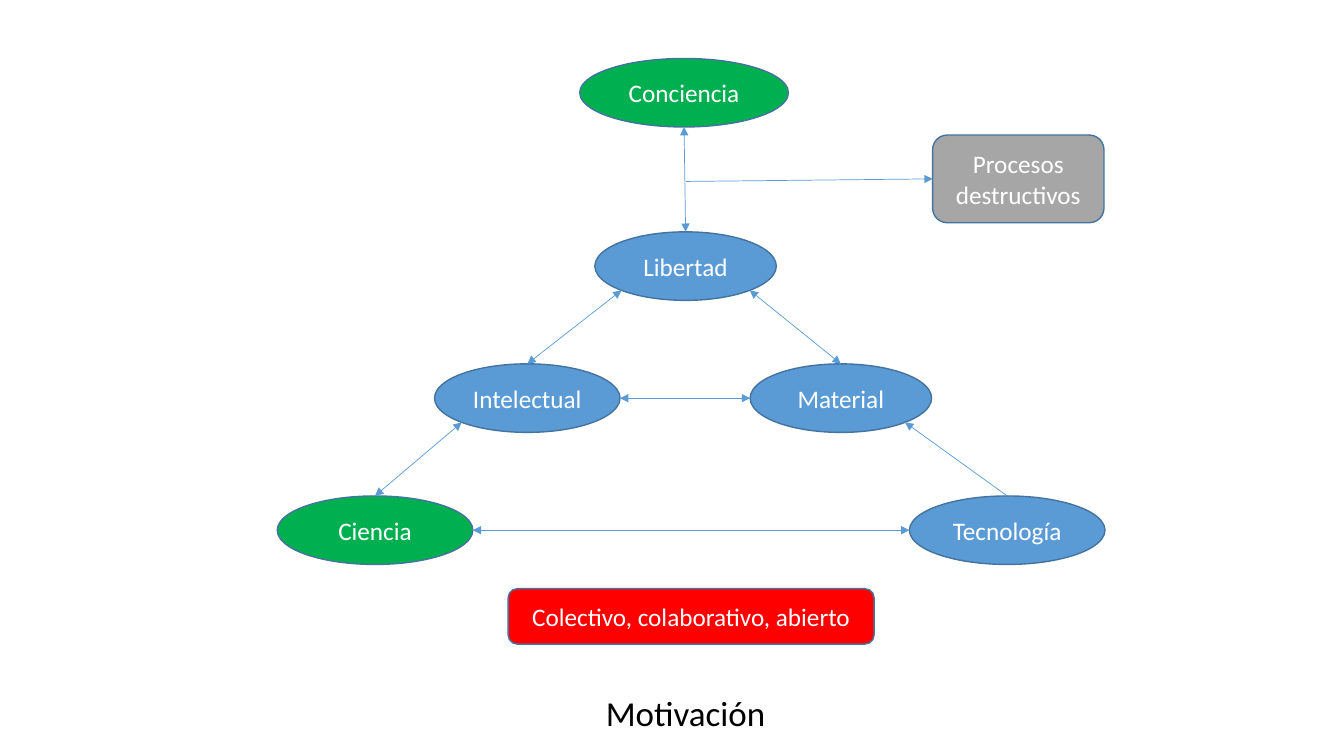
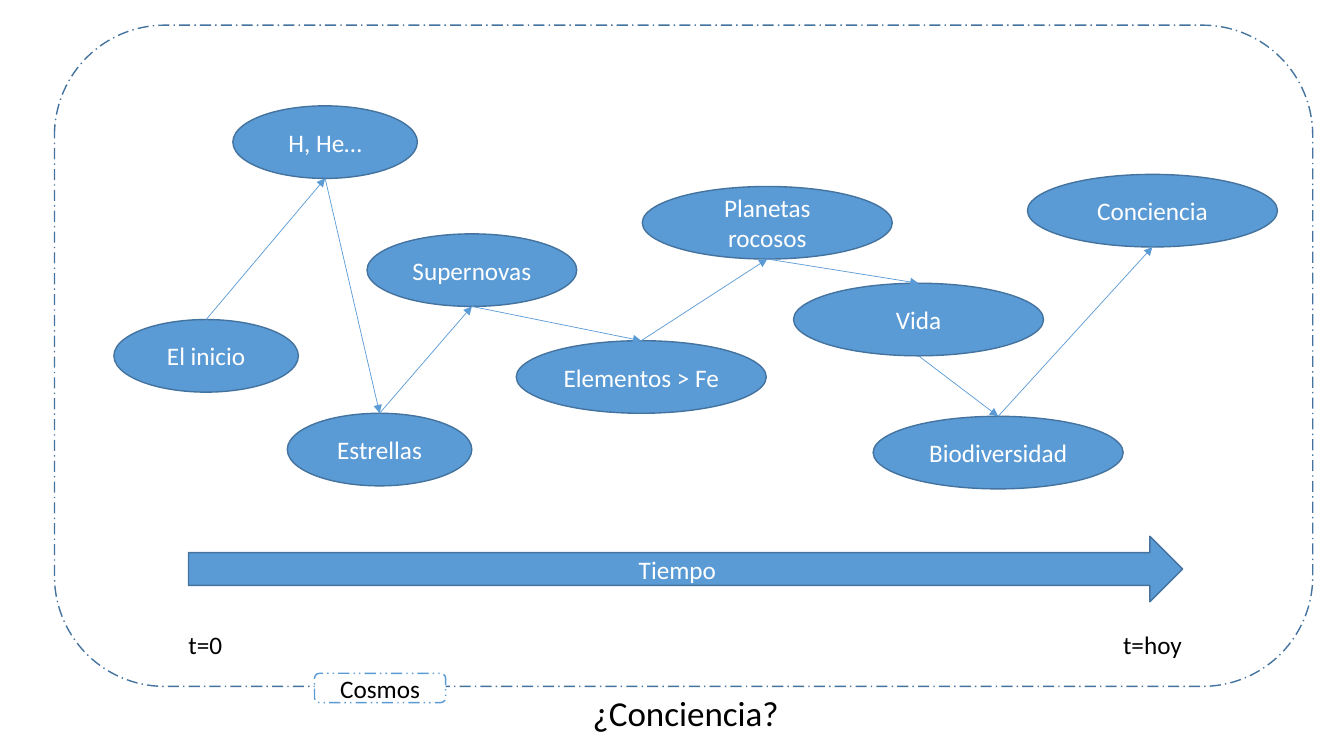
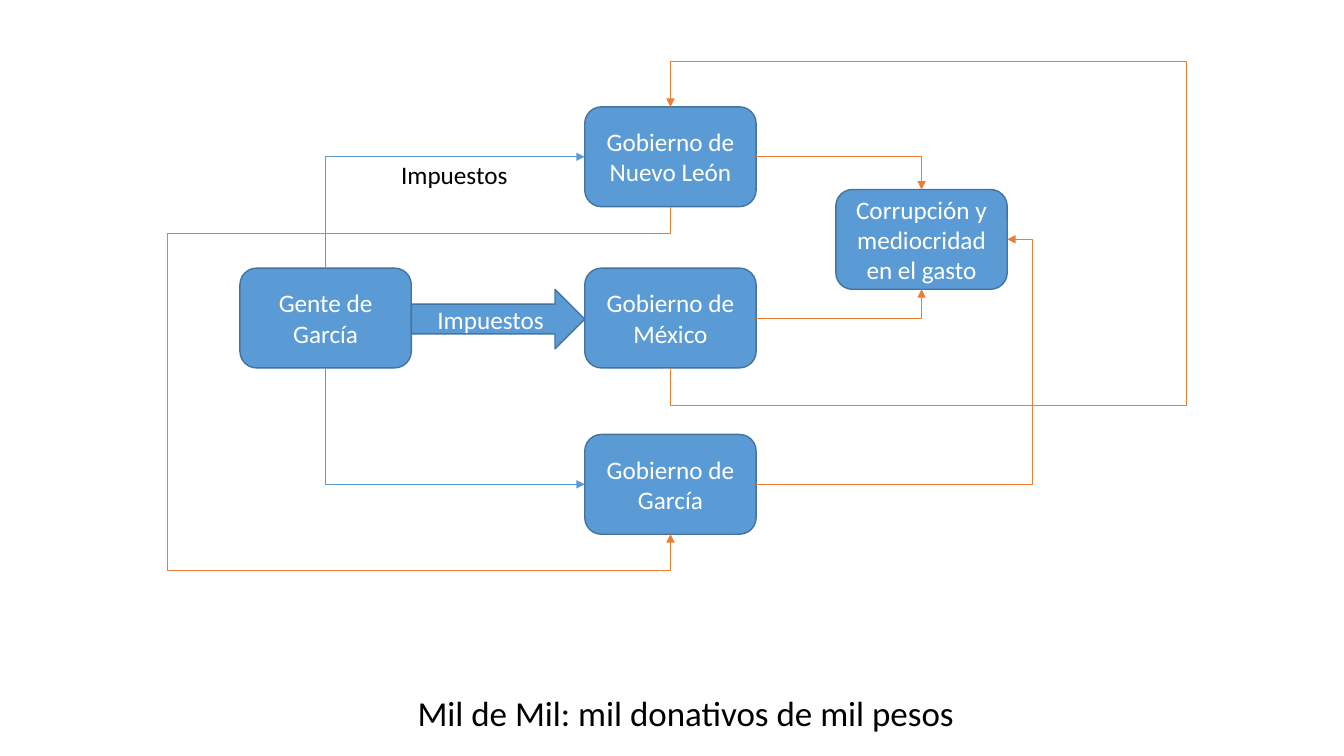
from dataclasses import dataclass
from itertools import pairwise
from math import sqrt

from lxml.etree import SubElement
from pptx import Presentation
from pptx.dml.color import RGBColor
from pptx.enum.dml import MSO_LINE
from pptx.enum.shapes import MSO_CONNECTOR, MSO_SHAPE
from pptx.enum.text import MSO_ANCHOR, MSO_AUTO_SIZE, PP_ALIGN
from pptx.oxml.ns import qn
from pptx.util import Inches, Pt


@dataclass(frozen=True)
class Theme:
    font: str = "Calibri"
    title_size: int = 25
    body_size: int = 18
    outline_width: float = 1
    arrow_width: float = 0.5
    blue: str = "5B9BD5"
    outline: str = "43739E"
    green: str = "00B050"
    gray: str = "A6A6A6"
    red: str = "FF0000"
    orange: str = "ED7D31"
    white: str = "FFFFFF"
    black: str = "000000"


THEME = Theme()
TOP, LEFT, BOTTOM, RIGHT = range(4)
DIAGONAL = 1 / sqrt(2)
TITLE_CENTER = 6.8
TITLE_TOP = 6.81


def rgb(color):
    return RGBColor.from_string(color)


def write(shape, text, color, size=THEME.body_size, align=PP_ALIGN.CENTER):
    shape.text_frame.text = text
    paragraph = shape.text_frame.paragraphs[0]
    paragraph.alignment = align
    font = paragraph.runs[0].font
    font.name = THEME.font
    font.size = Pt(size)
    font.color.rgb = rgb(color)


def add_label(slide, text, left, top, width, height=0.4,
              size=THEME.body_size, align=PP_ALIGN.LEFT):
    label = slide.shapes.add_textbox(
        Inches(left), Inches(top), Inches(width), Inches(height))
    write(label, text, THEME.black, size, align)
    label.text_frame.word_wrap = False
    label.text_frame.auto_size = MSO_AUTO_SIZE.SHAPE_TO_FIT_TEXT


def add_titled_slide(deck, title, width):
    slide = deck.slides.add_slide(deck.slide_layouts[6])
    add_label(slide, title, TITLE_CENTER - width / 2, TITLE_TOP, width, 0.52,
              THEME.title_size, PP_ALIGN.CENTER)
    return slide


def add_node(slide, kind, text, box, fill=THEME.blue, outline=THEME.outline,
             dash=None, color=THEME.white):
    node = slide.shapes.add_shape(kind, *map(Inches, box))
    node.shadow.inherit = False
    if fill:
        node.fill.solid()
        node.fill.fore_color.rgb = rgb(fill)
    else:
        node.fill.background()
    node.line.color.rgb = rgb(outline)
    node.line.width = Pt(THEME.outline_width)
    if dash:
        node.line.dash_style = dash
    if text:
        write(node, text, color)
        node.text_frame.vertical_anchor = MSO_ANCHOR.MIDDLE
    return node


def point_on(node, across, down):
    x = node.left + node.width * (1 + across) / 2
    y = node.top + node.height * (1 + down) / 2
    return round(x), round(y)


def style_arrow(arrow, color, ends):
    arrow.line.color.rgb = rgb(color)
    arrow.line.width = Pt(THEME.arrow_width)
    properties = arrow.element.spPr
    for end in ends:
        SubElement(properties.find(qn("a:ln")), qn(f"a:{end}End"), type="triangle")
    if properties.find(qn("a:effectLst")) is None:
        SubElement(properties, qn("a:effectLst"))


def add_arrow(slide, start, end, ends=("head", "tail")):
    arrow = slide.shapes.add_connector(MSO_CONNECTOR.STRAIGHT, *start, *end)
    style_arrow(arrow, THEME.blue, ends)
    return arrow


def add_elbow(slide, start, start_side, end, end_side, color, arrow_end,
              reach=None):
    elbow = slide.shapes.add_connector(MSO_CONNECTOR.ELBOW, 0, 0, 0, 0)
    elbow.begin_connect(start, start_side)
    elbow.end_connect(end, end_side)
    geometry = elbow.element.spPr.find(qn("a:prstGeom"))
    if reach:
        SubElement(geometry.find(qn("a:avLst")), qn("a:gd"),
                   name="adj1", fmla=f"val {round(reach * 100000)}")
    else:
        geometry.set("prst", "bentConnector2")
    style_arrow(elbow, color, [arrow_end])


def add_loop(slide, start, end, side_x, start_y, end_y):
    side, first, last = map(Inches, (side_x, start_y, end_y))
    outline = slide.shapes.build_freeform(*start, scale=1.0)
    outline.add_line_segments(
        [(start[0], first), (side, first), (side, last), (end[0], last), end],
        close=False)
    loop = outline.convert_to_shape()
    loop.shadow.inherit = False
    loop.fill.background()
    style_arrow(loop, THEME.orange, ["tail"])


def build_motivation(deck):
    slide = add_titled_slide(deck, "Motivación", 1.8)

    def ellipse(text, left, top, width, fill=THEME.blue):
        return add_node(slide, MSO_SHAPE.OVAL, text, (left, top, width, 0.68), fill)

    conciencia = ellipse("Conciencia", 5.75, 0.58, 2.07, THEME.green)
    libertad = ellipse("Libertad", 5.9, 2.3, 1.8)
    intelectual = ellipse("Intelectual", 4.31, 3.61, 1.84)
    material = ellipse("Material", 7.44, 3.61, 1.8)
    tecnologia = ellipse("Tecnología", 9.02, 4.92, 1.94)
    ciencia = ellipse("Ciencia", 2.75, 4.92, 1.94, THEME.green)
    procesos = add_node(slide, MSO_SHAPE.ROUNDED_RECTANGLE, "Procesos destructivos",
                        (9.25, 1.34, 1.7, 0.87), THEME.gray)
    add_node(slide, MSO_SHAPE.ROUNDED_RECTANGLE, "Colectivo, colaborativo, abierto",
             (5.04, 5.84, 3.63, 0.55), THEME.red)

    add_arrow(slide, point_on(conciencia, 0, 1), point_on(libertad, 0, -1))
    for left_node, right_node in ((intelectual, material), (ciencia, tecnologia)):
        add_arrow(slide, point_on(left_node, 1, 0), point_on(right_node, -1, 0))
    for upper, lower, side in ((libertad, intelectual, -1), (libertad, material, 1),
                               (intelectual, ciencia, -1)):
        add_arrow(slide, point_on(upper, side * DIAGONAL, DIAGONAL),
                  point_on(lower, 0, -1))
    add_arrow(slide, point_on(tecnologia, 0, -1),
              point_on(material, DIAGONAL, DIAGONAL), ["tail"])
    branch = add_arrow(slide, (Inches(6.8), Inches(1.8)),
                       point_on(procesos, -1, 0), ["tail"])
    branch.end_connect(procesos, LEFT)


def build_consciousness(deck):
    slide = add_titled_slide(deck, "¿Conciencia?", 2.15)
    add_node(slide, MSO_SHAPE.RIGHT_ARROW, "Tiempo", (1.87, 5.32, 9.86, 0.65))
    add_label(slide, "t=0", 1.77, 6.19, 0.54)
    add_label(slide, "t=hoy", 11.04, 6.19, 0.79)

    stages = [
        ("El inicio", 1.13, 3.17, 1.83),
        ("H, He…", 2.31, 1.05, 1.83),
        ("Estrellas", 2.85, 4.1, 1.83),
        ("Supernovas", 3.64, 2.32, 2.08),
        ("Elementos > Fe", 5.12, 3.38, 2.48),
        ("Planetas rocosos", 6.37, 1.85, 2.48),
        ("Vida", 7.87, 2.81, 2.48),
        ("Biodiversidad", 8.66, 4.13, 2.48),
        ("Conciencia", 10.19, 1.73, 2.48),
    ]
    nodes = [add_node(slide, MSO_SHAPE.OVAL, text, (left, top, width, 0.72))
             for text, left, top, width in stages]
    for earlier, later in pairwise(nodes):
        edge = -1 if later.top < earlier.top else 1
        add_arrow(slide, point_on(earlier, 0, edge), point_on(later, 0, -edge),
                  ["tail"])

    add_node(slide, MSO_SHAPE.ROUNDED_RECTANGLE, "", (0.54, 0.25, 12.48, 6.56),
             fill=None, dash=MSO_LINE.LONG_DASH_DOT)
    add_node(slide, MSO_SHAPE.ROUNDED_RECTANGLE, "Cosmos", (3.12, 6.68, 1.3, 0.29),
             THEME.white, THEME.blue, MSO_LINE.DASH_DOT_DOT, THEME.black)


def build_donations(deck):
    slide = add_titled_slide(deck, "Mil de Mil: mil donativos de mil pesos", 5.58)

    def block(text, left, top):
        return add_node(slide, MSO_SHAPE.ROUNDED_RECTANGLE, text,
                        (left, top, 1.7, 0.99))

    gente = block("Gente de García", 2.38, 2.66)
    mexico = block("Gobierno de México", 5.8, 2.66)
    nuevo_leon = block("Gobierno de Nuevo León", 5.8, 1.06)
    garcia = block("Gobierno de García", 5.8, 4.31)
    corrupcion = block("Corrupción y mediocridad en el gasto", 8.29, 1.88)
    add_node(slide, MSO_SHAPE.RIGHT_ARROW, "Impuestos", (4.08, 2.87, 1.72, 0.59))
    add_label(slide, "Impuestos", 3.88, 1.53, 1.27)

    for government, side in ((nuevo_leon, TOP), (garcia, BOTTOM)):
        add_elbow(slide, government, LEFT, gente, side, THEME.blue, "head")
    for government, side in ((nuevo_leon, TOP), (mexico, BOTTOM)):
        add_elbow(slide, government, RIGHT, corrupcion, side, THEME.orange, "tail")
    add_elbow(slide, garcia, RIGHT, corrupcion, RIGHT, THEME.orange, "tail", 1.1)
    add_loop(slide, point_on(mexico, 0, 1), point_on(nuevo_leon, 0, -1),
             11.77, 4.02, 0.61)
    add_loop(slide, point_on(nuevo_leon, 0, 1), point_on(garcia, 0, 1),
             1.66, 2.32, 5.66)


def main():
    deck = Presentation()
    deck.slide_width = Inches(13.33)
    deck.slide_height = Inches(7.5)
    build_motivation(deck)
    build_consciousness(deck)
    build_donations(deck)
    deck.save("out.pptx")


if __name__ == "__main__":
    main()
